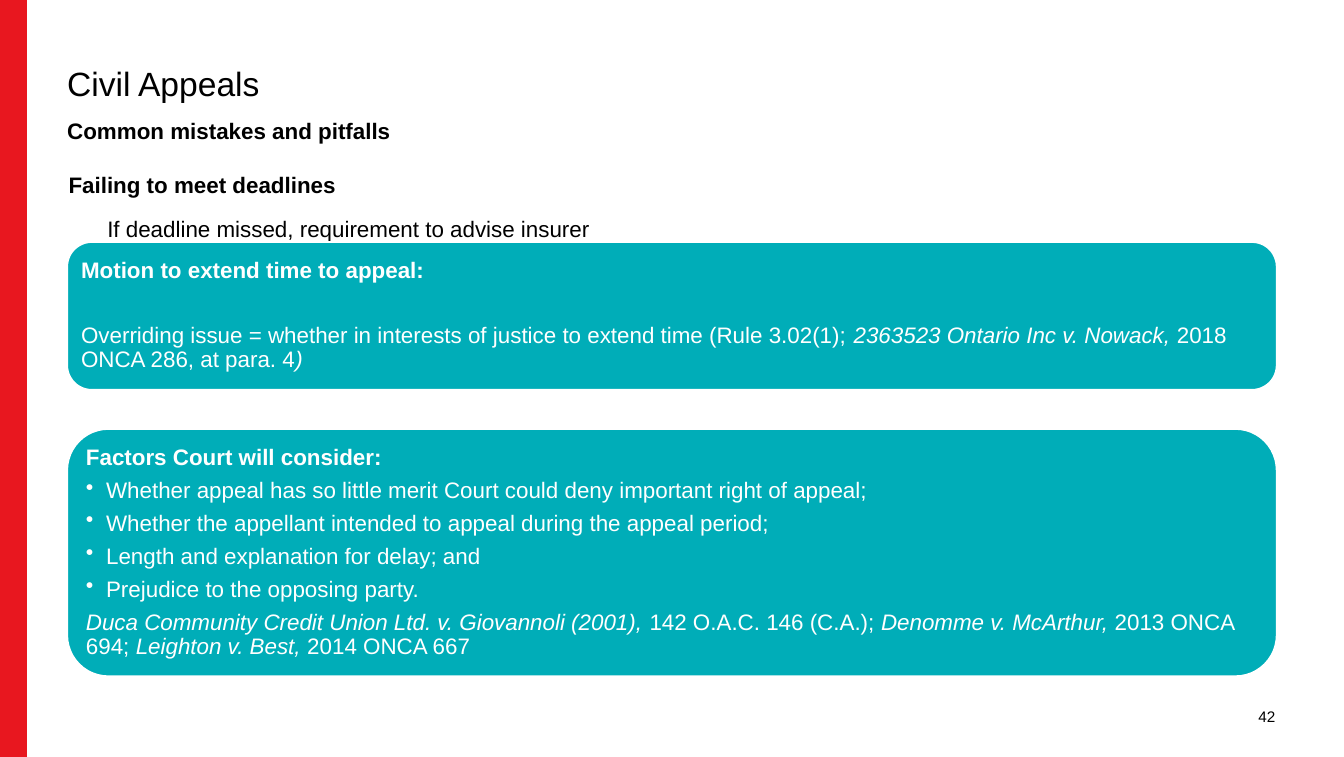
from lxml import etree
from pptx import Presentation
from pptx.dml.color import RGBColor
from pptx.enum.shapes import MSO_SHAPE
from pptx.enum.text import MSO_ANCHOR, MSO_AUTO_SIZE, PP_ALIGN
from pptx.oxml.ns import qn
from pptx.util import Inches, Pt

RECT, ROUND = MSO_SHAPE.RECTANGLE, MSO_SHAPE.ROUNDED_RECTANGLE
TOP, MIDDLE = MSO_ANCHOR.TOP, MSO_ANCHOR.MIDDLE
LEFT, RIGHT = PP_ALIGN.LEFT, PP_ALIGN.RIGHT
NO_FIT = MSO_AUTO_SIZE.NONE
RED, TEAL, WHITE, BLACK = "E8171F", "00ADB8", "FFFFFF", "000000"


def color(code):
    return RGBColor.from_string(code)


def write(shape, paras, ink=BLACK, size=12, inset=0, anchor=TOP,
          align=LEFT, lead=1.0):
    """Fill a shape from (bullet, space after, runs); a run is (text, style)."""
    frame = shape.text_frame
    frame.word_wrap = True
    frame.auto_size = NO_FIT
    frame.vertical_anchor = anchor
    frame.margin_left = frame.margin_right = Inches(inset)
    frame.margin_top = frame.margin_bottom = Inches(inset)
    for i, (bullet, after, runs) in enumerate(paras):
        para = frame.add_paragraph() if i else frame.paragraphs[0]
        props = para._p.get_or_add_pPr()
        indent = Inches(0.15) if bullet else 0
        props.set("marL", str(indent))
        props.set("indent", str(-indent))
        if bullet:
            etree.SubElement(props, qn("a:buChar")).set("char", "•")
        else:
            etree.SubElement(props, qn("a:buNone"))
        para.alignment = align
        para.line_spacing = lead
        para.space_before = Pt(0)
        para.space_after = Pt(after)
        for text, style in runs:
            run = para.add_run()
            run.text = text
            font = run.font
            font.name, font.size = "Arial", Pt(size)
            font.bold, font.italic = style == "b", style == "i"
            font.color.rgb = color(ink)


prs = Presentation()
prs.slide_width, prs.slide_height = Inches(10), Inches(5.63)
slide = prs.slides.add_slide(prs.slide_layouts[1])
shapes = slide.shapes

# Red edge
edge = shapes.add_shape(RECT, 0, 0, Inches(0.2), prs.slide_height)
edge.shadow.inherit = False
edge.fill.solid()
edge.fill.fore_color.rgb = color(RED)
edge.line.fill.background()

# Title and subtitle
title, body = shapes.title, slide.placeholders[1]
for holder, top, height in ((title, 0.5, 0.37), (body, 0.87, 0.23)):
    holder.left, holder.top = Inches(0.5), Inches(top)
    holder.width, holder.height = Inches(9), Inches(height)
write(title, [(False, 0, [("Civil Appeals", "")])], size=18, lead=0.9)
write(body, [(False, 0, [("Common mistakes and pitfalls", "b")])])

# Plain text: left, top, width, height, text, style, size, inset, anchor, align
notes = [
    (0.42, 1.18, 5.63, 0.3, "Failing to meet deadlines", "b",
     12, 0.1, TOP, LEFT),
    (0.7, 1.5, 6.94, 0.3, "If deadline missed, requirement to advise insurer",
     "", 12, 0.1, TOP, LEFT),
    (8.93, 5.03, 0.56, 0.6, "42", "", 8.2, 0, MIDDLE, RIGHT),
]
for left, top, width, height, text, style, size, inset, anchor, align in notes:
    box = shapes.add_textbox(Inches(left), Inches(top),
                             Inches(width), Inches(height))
    if inset:
        inset = 0.09 if style else 0.1
    write(box, [(False, 0, [(text, style)])], size=size, inset=inset,
          anchor=anchor, align=align)

# Teal panels
GAP = 4.7
motion = [
    (False, 22, [("Motion to extend time to appeal:", "b")]),
    (False, 0, [
        ("Overriding issue = whether in interests of justice to extend time "
         "(Rule 3.02(1); ", ""),
        ("2363523 Ontario Inc v. Nowack, ", "i"),
        ("2018 ONCA 286, at para. 4", ""),
        (")", "i"),
    ]),
]
points = [
    "Whether appeal has so little merit Court could deny important right "
    "of appeal;",
    "Whether the appellant intended to appeal during the appeal period;",
    "Length and explanation for delay; and",
    "Prejudice to the opposing party.",
]
factors = [
    (False, GAP, [("Factors Court will consider:", "b")]),
    *[(True, GAP, [(point, "")]) for point in points],
    (False, 0, [
        ("Duca Community Credit Union Ltd. v. Giovannoli (2001), ", "i"),
        ("142 O.A.C. 146 (C.A.); ", ""),
        ("Denomme v. McArthur, ", "i"),
        ("2013 ONCA 694; ", ""),
        ("Leighton v. Best, ", "i"),
        ("2014 ONCA 667", ""),
    ]),
]
for top, height, paras in ((1.8, 1.1, motion), (3.19, 1.84, factors)):
    panel = shapes.add_shape(ROUND, Inches(0.5), Inches(top),
                             Inches(9), Inches(height))
    panel.shadow.inherit = False
    panel.fill.solid()
    panel.fill.fore_color.rgb = color(TEAL)
    panel.line.color.rgb = color(WHITE)
    panel.line.width = Pt(1)
    write(panel, paras, ink=WHITE, inset=0.05, anchor=MIDDLE, lead=0.9)

prs.save("out.pptx")
